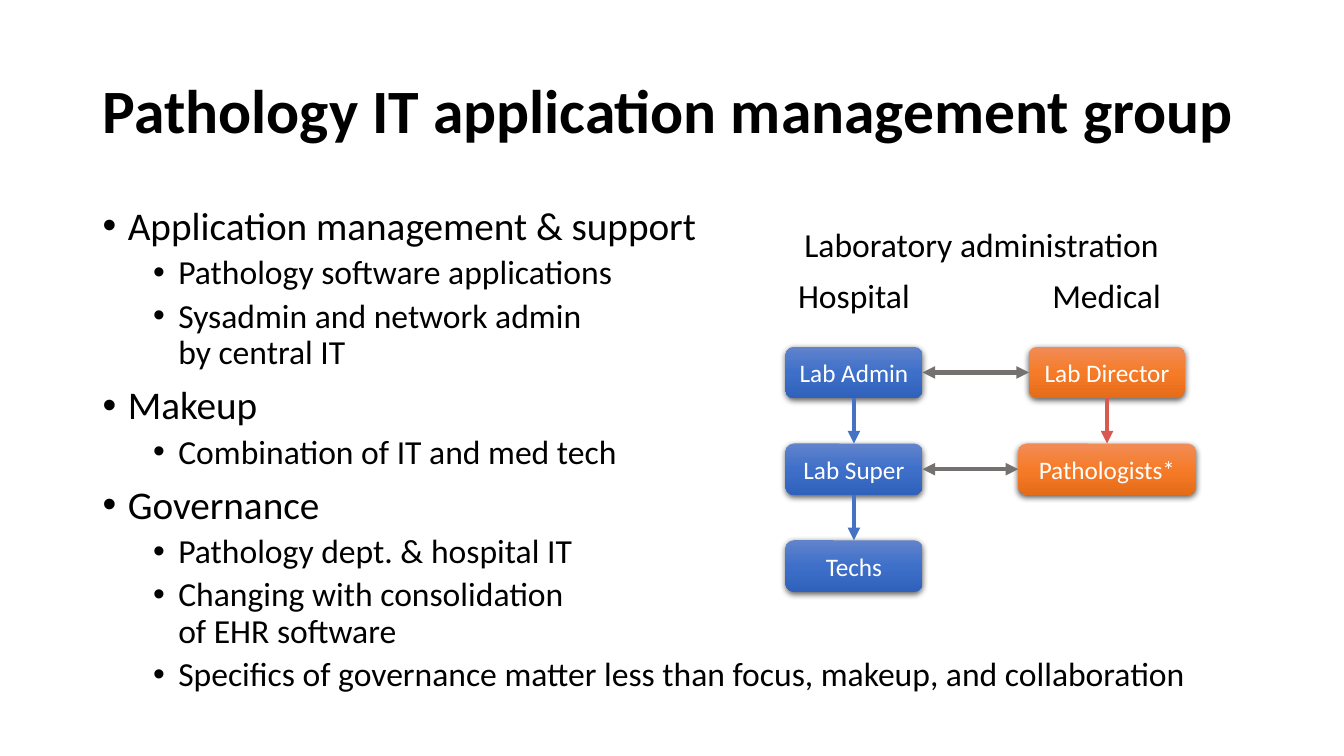
from copy import deepcopy
from dataclasses import dataclass

from lxml.etree import SubElement
from pptx import Presentation
from pptx.dml.color import RGBColor
from pptx.enum.shapes import MSO_CONNECTOR, MSO_SHAPE
from pptx.enum.text import MSO_ANCHOR, MSO_AUTO_SIZE, PP_ALIGN
from pptx.oxml.ns import qn
from pptx.shapes.autoshape import Shape
from pptx.slide import Slide
from pptx.util import Inches, Pt

BLUE = ("6183CB", "3E70CA", "3062BB")
ORANGE = ("F18C57", "F67B28", "E56C19")
GREY = "767171"
HOSPITAL_X, MEDICAL_X = 8.47, 10.98
TOP, PITCH, BOX_HEIGHT = 3.44, 0.96, 0.51
ABOVE, LEFT, BELOW, RIGHT = range(4)


@dataclass
class Role:
    name: str
    center: float
    row: int
    width: float
    colors: tuple[str, str, str]


@dataclass
class Link:
    start: str
    end: str
    color: str
    mutual: bool = False


@dataclass
class Label:
    text: str
    left: float
    top: float
    width: float


@dataclass
class Bullet:
    text: str
    level: int = 0


ROLES = [
    Role("Lab Admin", HOSPITAL_X, 0, 1.36, BLUE),
    Role("Lab Super", HOSPITAL_X, 1, 1.36, BLUE),
    Role("Techs", HOSPITAL_X, 2, 1.36, BLUE),
    Role("Lab Director", MEDICAL_X, 0, 1.55, ORANGE),
    Role("Pathologists*", MEDICAL_X, 1, 1.76, ORANGE),
]
LINKS = [
    Link("Lab Admin", "Lab Super", "4472C4"),
    Link("Lab Super", "Techs", "4472C4"),
    Link("Lab Director", "Pathologists*", "D95950"),
    Link("Lab Admin", "Lab Director", GREY, mutual=True),
    Link("Lab Super", "Pathologists*", GREY, mutual=True),
]
LABELS = [
    Label("Hospital", 7.81, 2.68, 1.32),
    Label("Medical", 10.33, 2.68, 1.29),
    Label("Laboratory administration", 7.86, 2.17, 3.75),
]
BULLETS = [
    Bullet("Application management & support"),
    Bullet("Pathology software applications", 1),
    Bullet("Sysadmin and network admin\nby central IT", 1),
    Bullet("Makeup"),
    Bullet("Combination of IT and med tech", 1),
    Bullet("Governance"),
    Bullet("Pathology dept. & hospital IT", 1),
    Bullet("Changing with consolidation\nof EHR software", 1),
    Bullet("Specifics of governance matter less than focus, makeup, and collaboration", 1),
]


def rgb(color: str) -> RGBColor:
    return RGBColor.from_string(color)


def write(p, text: str, *, size: float, color: str = "000000", bold: bool = False,
          align: PP_ALIGN = PP_ALIGN.LEFT, spacing: float | None = None,
          before: float = 0) -> None:
    p.text = text
    p.alignment = align
    p.line_spacing = spacing
    p.space_before = Pt(before)
    for r in p.runs:
        r.font.name = "Calibri"
        r.font.size = Pt(size)
        r.font.bold = bold
        r.font.color.rgb = rgb(color)


def add_title(slide: Slide, text: str) -> None:
    s = slide.shapes.title
    s.left, s.top, s.width, s.height = (Inches(v) for v in (0.92, 0.4, 11.5, 1.45))
    tf = s.text_frame
    tf.auto_size = MSO_AUTO_SIZE.NONE
    tf.vertical_anchor = MSO_ANCHOR.MIDDLE
    write(tf.paragraphs[0], text, size=44, bold=True, spacing=0.9)


def add_bullets(slide: Slide, bullets: list[Bullet]) -> None:
    s = slide.shapes.add_textbox(Inches(0.92), Inches(2), Inches(11.5), Inches(5.1))
    tf = s.text_frame
    tf.word_wrap = True
    for i, bullet in enumerate(bullets):
        p = tf.add_paragraph() if i else tf.paragraphs[0]
        p.level = bullet.level
        write(p, bullet.text, size=24 if bullet.level else 28, spacing=0.9,
              before=5 if bullet.level else 10)
        props = p._p.get_or_add_pPr()
        props.set("marL", str(Inches(0.25 + 0.5 * bullet.level)))
        props.set("indent", str(Inches(-0.25)))
        SubElement(props, qn("a:buFont"), typeface="Arial")
        SubElement(props, qn("a:buChar"), char="•")


def shade(s: Shape, colors: tuple[str, str, str]) -> None:
    s.fill.gradient()
    s.fill.gradient_angle = 270
    stops = s._element.spPr.find(".//" + qn("a:gsLst"))
    stops.append(deepcopy(stops[0]))
    for i, stop in enumerate(s.fill.gradient_stops):
        stop.position = i / 2
        stop.color.rgb = rgb(colors[i])
    s.line.fill.background()
    s.shadow.inherit = False
    effects = s._element.spPr.find(qn("a:effectLst"))
    shadow = SubElement(effects, qn("a:outerShdw"), blurRad=str(Pt(4.5)),
                        dist=str(Pt(1.5)), dir="5400000", algn="ctr", rotWithShape="0")
    black = SubElement(shadow, qn("a:srgbClr"), val="000000")
    SubElement(black, qn("a:alpha"), val="63000")


def add_role(slide: Slide, role: Role) -> Shape:
    s = slide.shapes.add_shape(
        MSO_SHAPE.ROUNDED_RECTANGLE, Inches(role.center - role.width / 2),
        Inches(TOP + PITCH * role.row), Inches(role.width), Inches(BOX_HEIGHT))
    shade(s, role.colors)
    tf = s.text_frame
    tf.word_wrap = False
    tf.vertical_anchor = MSO_ANCHOR.MIDDLE
    write(tf.paragraphs[0], role.name, size=18, color="FFFFFF", align=PP_ALIGN.CENTER)
    return s


def add_link(slide: Slide, link: Link, boxes: dict[str, Shape]) -> None:
    s = slide.shapes.add_connector(MSO_CONNECTOR.STRAIGHT, 0, 0, 0, 0)
    s.begin_connect(boxes[link.start], RIGHT if link.mutual else BELOW)
    s.end_connect(boxes[link.end], LEFT if link.mutual else ABOVE)
    s.line.color.rgb = rgb(link.color)
    s.line.width = Pt(3)
    line = s.line._get_or_add_ln()
    for end in ("a:headEnd", "a:tailEnd") if link.mutual else ("a:tailEnd",):
        SubElement(line, qn(end), type="triangle")
    SubElement(s._element.spPr, qn("a:effectLst"))


def add_label(slide: Slide, label: Label) -> None:
    s = slide.shapes.add_textbox(Inches(label.left), Inches(label.top),
                                 Inches(label.width), Inches(0.5))
    tf = s.text_frame
    tf.word_wrap = False
    tf.auto_size = MSO_AUTO_SIZE.SHAPE_TO_FIT_TEXT
    write(tf.paragraphs[0], label.text, size=24, align=PP_ALIGN.CENTER)


def main() -> None:
    prs = Presentation()
    prs.slide_width, prs.slide_height = Inches(13.33), Inches(7.5)
    slide = prs.slides.add_slide(prs.slide_layouts.get_by_name("Title Only"))
    add_title(slide, "Pathology IT application management group")
    add_bullets(slide, BULLETS)
    boxes = {role.name: add_role(slide, role) for role in ROLES}
    for link in LINKS:
        add_link(slide, link, boxes)
    for label in LABELS:
        add_label(slide, label)
    prs.save("out.pptx")


if __name__ == "__main__":
    main()
